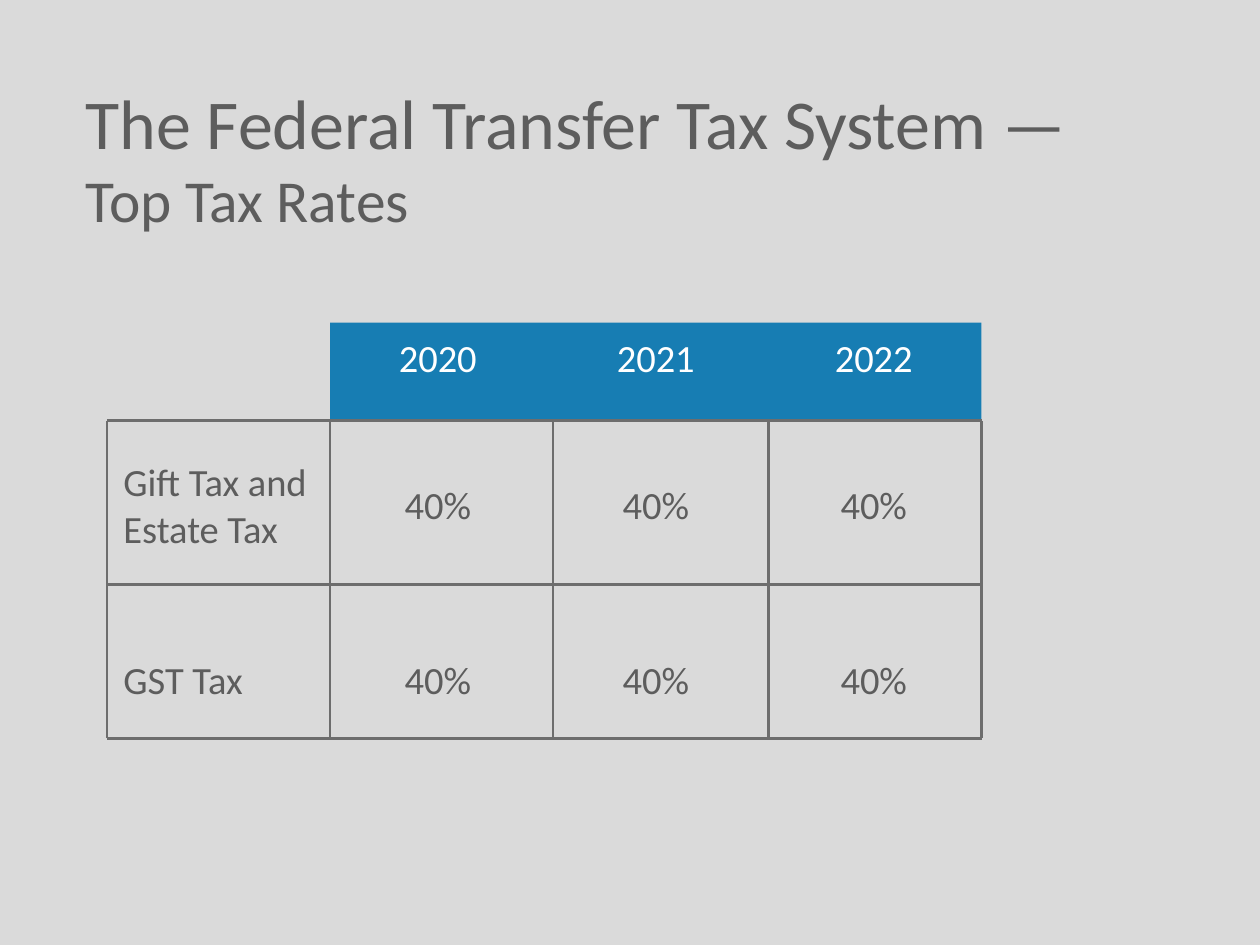
from pptx import Presentation
from pptx.dml.color import RGBColor
from pptx.enum.shapes import MSO_CONNECTOR, MSO_SHAPE
from pptx.enum.text import MSO_ANCHOR, PP_ALIGN
from pptx.oxml.ns import qn
from pptx.util import Inches, Pt
from lxml import etree

STRAIGHT, RECTANGLE = MSO_CONNECTOR.STRAIGHT, MSO_SHAPE.RECTANGLE
MIDDLE, LEFT, CENTER = MSO_ANCHOR.MIDDLE, PP_ALIGN.LEFT, PP_ALIGN.CENTER
BACKGROUND = RGBColor(0xDA, 0xDA, 0xDA)
BLUE = RGBColor(0x17, 0x7D, 0xB3)
TEXT = RGBColor(0x5D, 0x5D, 0x5D)
RULE = RGBColor(0x6D, 0x6D, 0x6D)
WHITE = RGBColor(0xFF, 0xFF, 0xFF)
FONT = "Calibri"
NO_STYLE = "{2D5ABB26-0587-4C30-8999-92F81FD0307C}"

# Content
TITLE = (("The Federal Transfer Tax System —", 40), ("Top Tax Rates", 34))
RATES = [
    ("", "2020", "2021", "2022"),
    ("Gift Tax and Estate Tax", "40%", "40%", "40%"),
    ("GST Tax", "40%", "40%", "40%"),
]

# Layout in inches
TABLE_LEFT, TABLE_TOP, COLUMN_WIDTH = 0.88, 2.36, 1.73
ROW_HEIGHTS = (0.99, 1.34, 1.43)
RULE_COLUMNS = (0.85, 2.62, 4.39, 6.1, 7.79)
RULE_ROWS = (3.34, 4.64, 5.86)
HEADER_TOP = 2.56


def style(font, size, color):
    font.name, font.size, font.color.rgb = FONT, Pt(size), color


def add_rule(page, x1, y1, x2, y2):
    rule = page.shapes.add_connector(
        STRAIGHT, Inches(x1), Inches(y1), Inches(x2), Inches(y2))
    rule.line.color.rgb, rule.line.width = RULE, Pt(1.5)
    etree.SubElement(rule._element.spPr, qn("a:effectLst"))


def add_header_band(page):
    left, right = RULE_COLUMNS[1], RULE_COLUMNS[-1]
    band = page.shapes.add_shape(
        RECTANGLE, Inches(left), Inches(HEADER_TOP),
        Inches(right - left), Inches(RULE_ROWS[0] - HEADER_TOP))
    band.shadow.inherit = False
    band.fill.solid()
    band.fill.fore_color.rgb = BLUE
    band.line.fill.background()


def fill_title(title):
    title.left, title.top = Inches(0.58), Inches(0.58)
    title.width, title.height = Inches(7.99), Inches(1.33)
    frame = title.text_frame
    frame.text = "\v".join(text for text, size in TITLE)
    frame.vertical_anchor, frame.word_wrap = MIDDLE, True
    para = frame.paragraphs[0]
    para.alignment = LEFT
    for span, (text, size) in zip(para.runs, TITLE):
        style(span.font, size, TEXT)


def add_rates_table(page):
    frame = page.shapes.add_table(
        len(RATES), len(RATES[0]), Inches(TABLE_LEFT), Inches(TABLE_TOP),
        Inches(COLUMN_WIDTH * len(RATES[0])), Inches(sum(ROW_HEIGHTS)))
    table = frame.table
    table.first_row = table.horz_banding = False
    table._tbl.tblPr.find(qn("a:tableStyleId")).text = NO_STYLE
    for row, height in zip(table.rows, ROW_HEIGHTS):
        row.height = Inches(height)
    for r, values in enumerate(RATES):
        for c, value in enumerate(values):
            cell = table.cell(r, c)
            cell.fill.background()
            cell.vertical_anchor = MIDDLE
            cell.text_frame.text = value
            para = cell.text_frame.paragraphs[0]
            para.alignment = CENTER if c else LEFT
            for span in para.runs:
                style(span.font, 22, TEXT if r else WHITE)


def main():
    deck = Presentation()
    deck.slide_width, deck.slide_height = Inches(10), Inches(7.5)
    page = deck.slides.add_slide(deck.slide_layouts[5])
    page.background.fill.solid()
    page.background.fill.fore_color.rgb = BACKGROUND

    fill_title(page.shapes.title)
    add_header_band(page)
    add_rates_table(page)

    # Grid lines around the rates
    for x in RULE_COLUMNS:
        add_rule(page, x, RULE_ROWS[0], x, RULE_ROWS[-1])
    for y in RULE_ROWS:
        add_rule(page, RULE_COLUMNS[0], y, RULE_COLUMNS[-1], y)

    deck.save("out.pptx")


if __name__ == "__main__":
    main()
